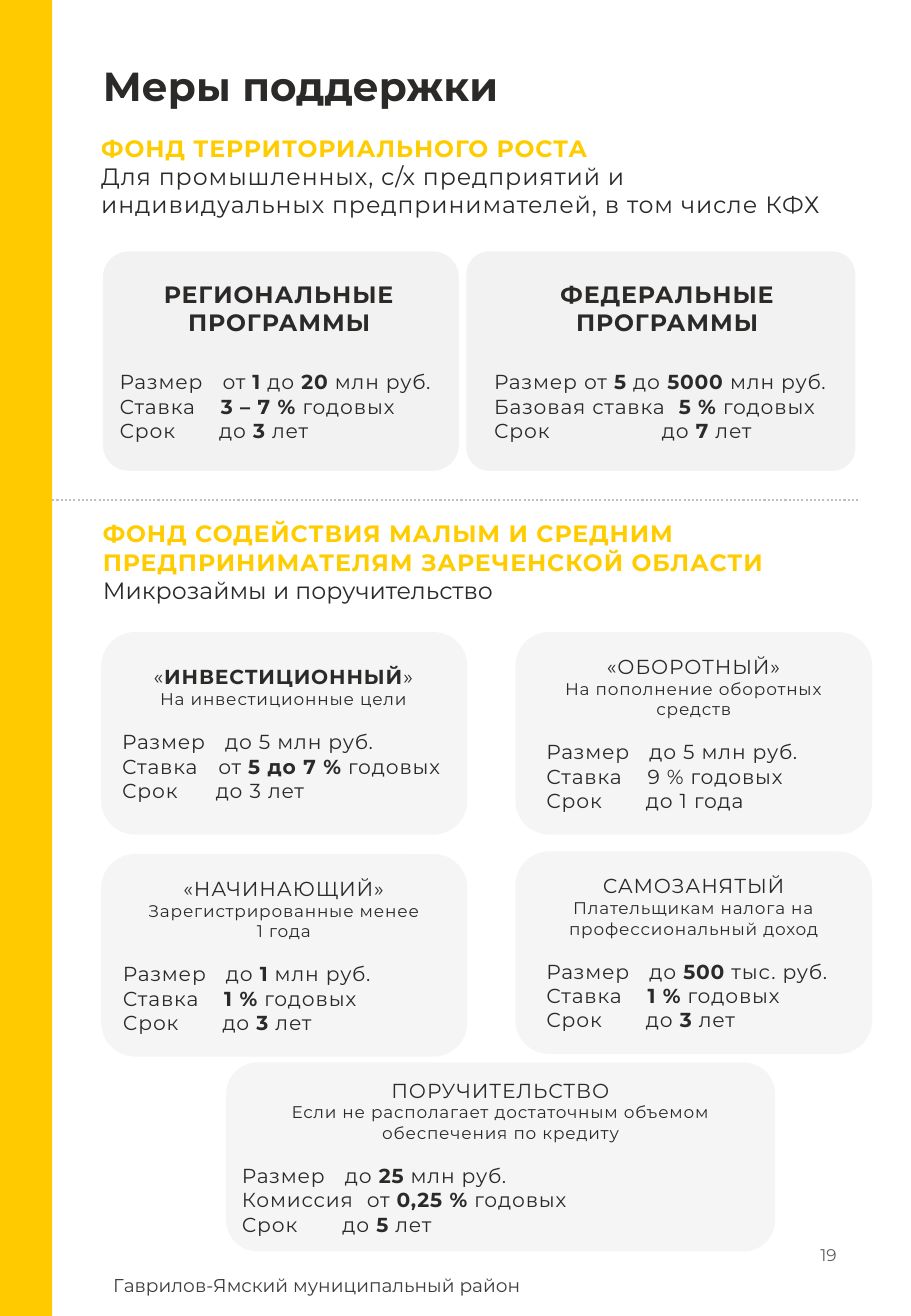
from lxml import etree
from pptx import Presentation
from pptx.dml.color import RGBColor
from pptx.enum import dml, shapes, text
from pptx.oxml import ns
from pptx.util import Pt

FONT = "Montserrat"
INK, GOLD = "2B2A29", "FFCC00"
CARD_INSETS = (9.4, 5, 9.4, 5)
NOTE_INSETS = (7.2, 3.6, 7.2, 3.6)
NO_INSETS = (0, 0, 0, 0)
VALUE_TABS = (61, 60, 59)


def paint(colour_format, colour):
    colour_format.rgb = RGBColor.from_string(colour)


def add_panel(slide, kind, box, colour, corner=None, opacity=None):
    panel = slide.shapes.add_shape(kind, *map(Pt, box))
    panel.shadow.inherit = False
    panel.fill.solid()
    paint(panel.fill.fore_color, colour)
    panel.line.fill.background()
    if corner is not None:
        panel.adjustments[0] = corner
    if opacity is not None:
        fill_colour = panel.fill._xPr.find(".//" + ns.qn("a:srgbClr"))
        etree.SubElement(fill_colour, ns.qn("a:alpha"), val=str(opacity * 1000))


def add_frame(slide, box, insets=NO_INSETS, anchor=text.MSO_ANCHOR.MIDDLE):
    frame = slide.shapes.add_textbox(*map(Pt, box)).text_frame
    frame.word_wrap = True
    frame.vertical_anchor = anchor
    (frame.margin_left, frame.margin_top,
     frame.margin_right, frame.margin_bottom) = map(Pt, insets)
    return frame


def write(frame, line, size, colour=INK, align=text.PP_ALIGN.LEFT,
          spacing=0.5, before=0, tab=None):
    """Add a line to the frame; parts between ** marks are bold."""
    paragraph = frame.paragraphs[0]
    if paragraph.runs:
        paragraph = frame.add_paragraph()
    paragraph.alignment = align
    paragraph.space_before = Pt(before)
    if tab:
        stops = etree.SubElement(paragraph._p.get_or_add_pPr(), ns.qn("a:tabLst"))
        etree.SubElement(stops, ns.qn("a:tab"), pos=str(Pt(tab)), algn="l")
    for index, part in enumerate(line.split("**")):
        if not part:
            continue
        run = paragraph.add_run()
        run.text = part
        run.font.name = FONT
        run.font.size = Pt(size)
        run.font.bold = index % 2 == 1
        paint(run.font.color, colour)
        run._r.get_or_add_rPr().set("spc", str(int(spacing * 100)))


def add_terms(frame, terms, gap, tabs=VALUE_TABS):
    """List loan terms, with each value at its tab stop."""
    for index, (term, tab) in enumerate(zip(terms, tabs)):
        write(frame, term, 12, before=0 if index else gap, tab=tab)


def add_card_text(slide, card, left, width, height):
    """Place a text frame at the middle height of its card."""
    top = card[1] + (card[3] - height) / 2
    return add_frame(slide, (left, top, width, height), CARD_INSETS)


def add_programme(slide, card, corner, left, width, title, terms, tabs=VALUE_TABS):
    add_panel(slide, shapes.MSO_SHAPE.ROUNDED_RECTANGLE, card, "F2F2F2", corner)
    frame = add_card_text(slide, card, left, width, 106.5)
    for line in title:
        write(frame, line, 14, align=text.PP_ALIGN.CENTER)
    add_terms(frame, terms, 19.5, tabs)


def add_loan(slide, card, left, width, title, purpose, terms, tabs=VALUE_TABS):
    add_panel(slide, shapes.MSO_SHAPE.ROUNDED_RECTANGLE, card, "D9D9D9", 0.167, 25)
    frame = add_card_text(slide, card, left, width, 104.5)
    write(frame, title, 12, align=text.PP_ALIGN.CENTER)
    for line in purpose:
        write(frame, line, 10, align=text.PP_ALIGN.CENTER)
    add_terms(frame, terms, 12.2, tabs)


def add_divider(slide, left, right, y):
    divider = slide.shapes.add_connector(
        shapes.MSO_CONNECTOR.STRAIGHT, Pt(left), Pt(y), Pt(right), Pt(y))
    divider.line.width = Pt(1.25)
    paint(divider.line.color, "BFBFBF")
    divider.line.dash_style = dml.MSO_LINE.ROUND_DOT
    etree.SubElement(divider._element.spPr, ns.qn("a:effectLst"))


def add_fund(slide, box, name, audience, spacing):
    frame = add_frame(slide, box)
    write(frame, f"**{name}**", 14, GOLD)
    write(frame, audience, 14, spacing=spacing)


def add_programmes(slide):
    add_programme(
        slide, (61, 149, 211, 130), 0.119, 61.5, 208,
        ["**РЕГИОНАЛЬНЫЕ ПРОГРАММЫ**"],
        ["Размер\tот **1** до **20** млн руб.",
         "Ставка\t**3 – 7 %** годовых",
         "Срок\tдо **3** лет"])
    add_programme(
        slide, (276.5, 149, 230.5, 130), 0.104, 283.5, 224,
        ["**ФЕДЕРАЛЬНЫЕ**", "**ПРОГРАММЫ**"],
        ["Размер от **5** до **5000** млн руб.",
         "Базовая ставка\t**5 %** годовых",
         "Срок\tдо **7** лет"],
        (None, 109.5, 99.5))


def add_loans(slide):
    add_loan(
        slide, (60, 374.5, 217, 120), 63, 210,
        "«**ИНВЕСТИЦИОННЫЙ**»", ["На инвестиционные цели"],
        ["Размер\tдо 5 млн руб.",
         "Ставка\tот **5 до 7 %** годовых",
         "Срок\tдо 3 лет"],
        (61, 57, 55.5))
    add_loan(
        slide, (305.5, 374.5, 211.5, 120), 314.5, 193.5,
        "«ОБОРОТНЫЙ»", ["На пополнение оборотных средств"],
        ["Размер\tдо 5 млн руб.",
         "Ставка\t9 % годовых",
         "Срок\tдо 1 года"])
    add_loan(
        slide, (60, 506, 217, 120), 63.5, 209.5,
        "«НАЧИНАЮЩИЙ»", ["Зарегистрированные менее", "1 года"],
        ["Размер\tдо **1** млн руб.",
         "Ставка\t**1 %** годовых",
         "Срок\tдо **3** лет"])
    add_loan(
        slide, (305.5, 504.5, 211.5, 120), 314.5, 193.5,
        "САМОЗАНЯТЫЙ", ["Плательщикам налога на профессиональный доход"],
        ["Размер\tдо **500** тыс. руб.",
         "Ставка\t**1 %** годовых",
         "Срок\tдо **3** лет"])
    add_loan(
        slide, (134, 629.5, 325.5, 112), 134, 325.5,
        "ПОРУЧИТЕЛЬСТВО",
        ["Если не располагает достаточным объемом обеспечения по кредиту"],
        ["Размер\tдо **25** млн руб.",
         "Комиссия\tот **0,25 %** годовых",
         "Срок\tдо **5** лет"],
        (61, 74, 59.5))


def add_footer(slide):
    page_number = add_frame(slide, (381.5, 723, 121.5, 41.5), NOTE_INSETS)
    write(page_number, "19", 10, "625F5D", text.PP_ALIGN.RIGHT, spacing=0)
    district = add_frame(slide, (60, 751.5, 277, 21), NOTE_INSETS, text.MSO_ANCHOR.TOP)
    write(district, "Гаврилов-Ямский муниципальный район", 11, "3D3D3C", spacing=0)


def main():
    deck = Presentation()
    deck.slide_width, deck.slide_height = Pt(540), Pt(779.76)
    slide = deck.slides.add_slide(deck.slide_layouts[6])

    add_panel(slide, shapes.MSO_SHAPE.RECTANGLE, (0, 0, 31, 779.76), "FFCB00")
    heading = add_frame(slide, (61, 36, 440, 50.5), anchor=text.MSO_ANCHOR.TOP)
    write(heading, "**Меры поддержки**", 24, spacing=0)

    add_fund(slide, (60, 72.5, 439, 63.5), "ФОНД ТЕРРИТОРИАЛЬНОГО РОСТА",
             "Для промышленных, с/х предприятий и индивидуальных "
             "предпринимателей, в том числе КФХ", 0.5)
    add_programmes(slide)
    add_divider(slide, 31, 509.5, 296.5)
    add_fund(slide, (61, 296.5, 429, 72.5),
             "ФОНД СОДЕЙСТВИЯ МАЛЫМ И СРЕДНИМ ПРЕДПРИНИМАТЕЛЯМ "
             "ЗАРЕЧЕНСКОЙ ОБЛАСТИ", "Микрозаймы и поручительство", 0)
    add_loans(slide)
    add_footer(slide)
    deck.save("out.pptx")


if __name__ == "__main__":
    main()
